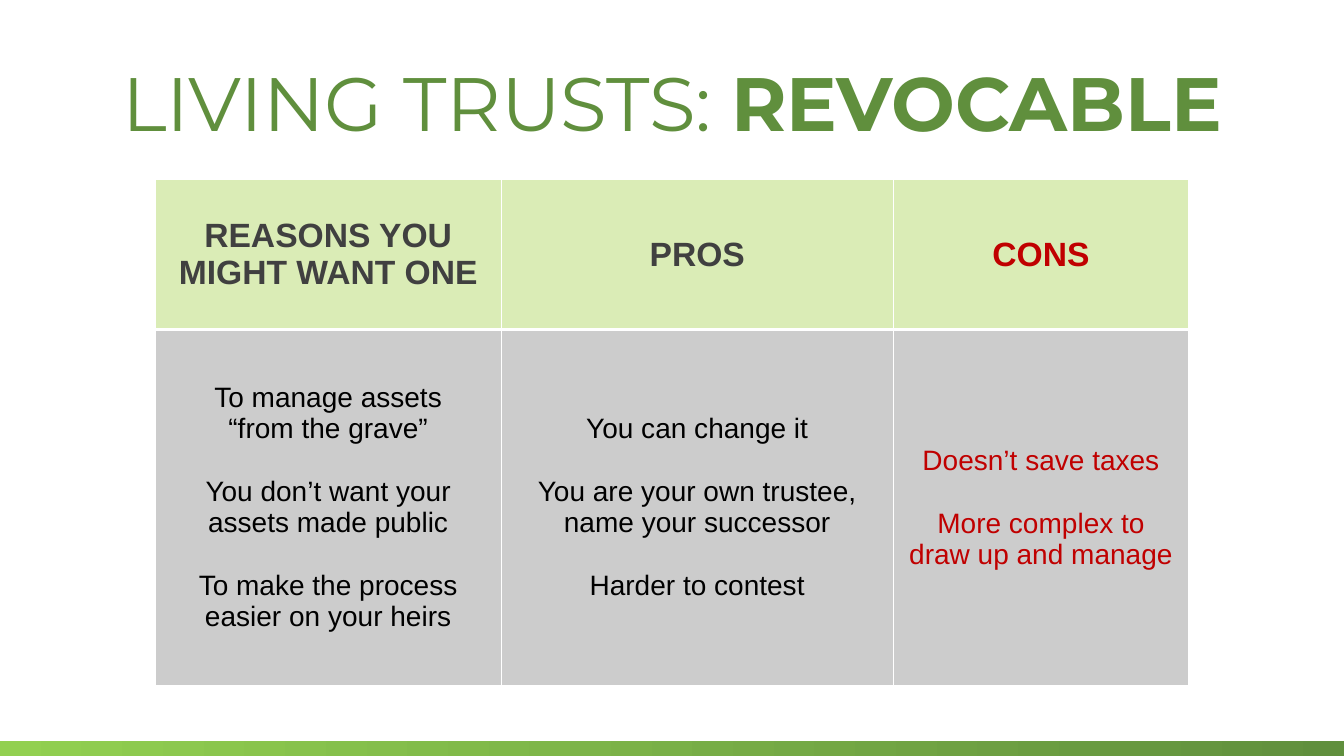
from dataclasses import dataclass

from lxml import etree
from pptx import Presentation
from pptx.dml.color import RGBColor
from pptx.enum.shapes import MSO_SHAPE
from pptx.enum.text import MSO_ANCHOR, MSO_AUTO_SIZE, PP_ALIGN
from pptx.oxml.ns import qn
from pptx.util import Inches, Pt

CENTER = PP_ALIGN.CENTER
MIDDLE = MSO_ANCHOR.MIDDLE
NO_FIT = MSO_AUTO_SIZE.NONE
RECT = MSO_SHAPE.RECTANGLE


@dataclass(frozen=True)
class Theme:
    title_font: str = "Montserrat"
    body_font: str = "Arial"
    green: str = "608F3D"
    lime: str = "92D050"
    header_fill: str = "DAECB6"
    body_fill: str = "CCCCCC"
    header_text: str = "404040"
    body_text: str = "000000"
    cons_text: str = "C00000"
    border: str = "FFFFFF"
    title_size: int = 54
    header_size: int = 24
    body_size: int = 20
    item_gap: float = 22.5


class SlideBuilder:
    def __init__(self, prs, theme):
        self.theme = theme
        self.s = prs.slides.add_slide(prs.slide_layouts[5])

    def run(self, p, text, font, size, color, bold=False):
        """Add text run by run, with a line break at each newline."""
        for i, line in enumerate(text.split("\n")):
            if i:
                p.add_line_break()
            r = p.add_run()
            r.text = line
            r.font.name = font
            r.font.size = Pt(size)
            r.font.bold = bold
            r.font.color.rgb = RGBColor.from_string(color)

    def gradient_bar(self, left, top, width, height):
        sp = self.s.shapes.add_shape(RECT, left, top, width, height)
        sp.shadow.inherit = False
        sp.line.fill.background()
        sp.fill.gradient()
        sp.fill.gradient_angle = 0
        colors = (self.theme.lime, self.theme.green)
        for stop, color in zip(sp.fill.gradient_stops, colors):
            stop.color.rgb = RGBColor.from_string(color)

    def title(self, parts, left, top, width, height):
        t = self.theme
        sp = self.s.shapes.title
        sp.left, sp.top, sp.width, sp.height = left, top, width, height
        tf = sp.text_frame
        tf.word_wrap = True
        tf.auto_size = NO_FIT
        tf.vertical_anchor = MIDDLE
        p = tf.paragraphs[0]
        p.alignment = CENTER
        for text, bold in parts:
            self.run(p, text, t.title_font, t.title_size, t.green, bold)

    def borders(self, cell, bottom):
        tc_pr = cell._tc.get_or_add_tcPr()
        for side, width in (("L", 1), ("R", 1), ("T", 1), ("B", bottom)):
            ln = etree.SubElement(tc_pr, qn(f"a:ln{side}"), w=str(Pt(width)))
            fill = etree.SubElement(ln, qn("a:solidFill"))
            etree.SubElement(fill, qn("a:srgbClr"), val=self.theme.border)

    def cell(self, cell, items, fill, size, color, bold=False, bottom=1):
        self.borders(cell, bottom)
        cell.fill.solid()
        cell.fill.fore_color.rgb = RGBColor.from_string(fill)
        cell.vertical_anchor = MIDDLE
        tf = cell.text_frame
        for i, item in enumerate(items):
            p = tf.add_paragraph() if i else tf.paragraphs[0]
            p.alignment = CENTER
            if i:
                p.space_before = Pt(self.theme.item_gap)
            self.run(p, item, self.theme.body_font, size, color, bold)

    def table(self, columns, widths, heights, left, top):
        t = self.theme
        tbl = self.s.shapes.add_table(
            len(heights), len(widths), left, top,
            Inches(sum(widths)), Inches(sum(heights))).table
        for row, height in zip(tbl.rows, heights):
            row.height = Inches(height)
        for c, (heading, items, head_color, item_color) in enumerate(columns):
            tbl.columns[c].width = Inches(widths[c])
            self.cell(tbl.cell(0, c), [heading], t.header_fill,
                      t.header_size, head_color, bold=True, bottom=3)
            self.cell(tbl.cell(1, c), items, t.body_fill,
                      t.body_size, item_color)


def main():
    prs = Presentation()
    prs.slide_width, prs.slide_height = Inches(13.33), Inches(7.5)
    theme = Theme()
    slide = SlideBuilder(prs, theme)

    # Footer bar
    slide.gradient_bar(0, Inches(7.35), prs.slide_width, Inches(0.15))

    # Title
    slide.title([("LIVING TRUSTS: ", False), ("REVOCABLE", True)],
                Inches(0.56), Inches(0.5), Inches(12.21), Inches(1.01))

    # Reasons, pros and cons
    columns = [
        ("REASONS YOU\nMIGHT WANT ONE",
         ["To manage assets\n“from the grave”",
          "You don’t want your assets made public",
          "To make the process easier on your heirs"],
         theme.header_text, theme.body_text),
        ("PROS",
         ["You can change it",
          "You are your own trustee, name your successor",
          "Harder to contest"],
         theme.header_text, theme.body_text),
        ("CONS",
         ["Doesn’t save taxes",
          "More complex to draw up and manage"],
         theme.cons_text, theme.cons_text),
    ]
    slide.table(columns, widths=[3.43, 3.89, 2.93], heights=[1.49, 3.53],
                left=Inches(1.54), top=Inches(1.78))

    prs.save("out.pptx")


if __name__ == "__main__":
    main()
